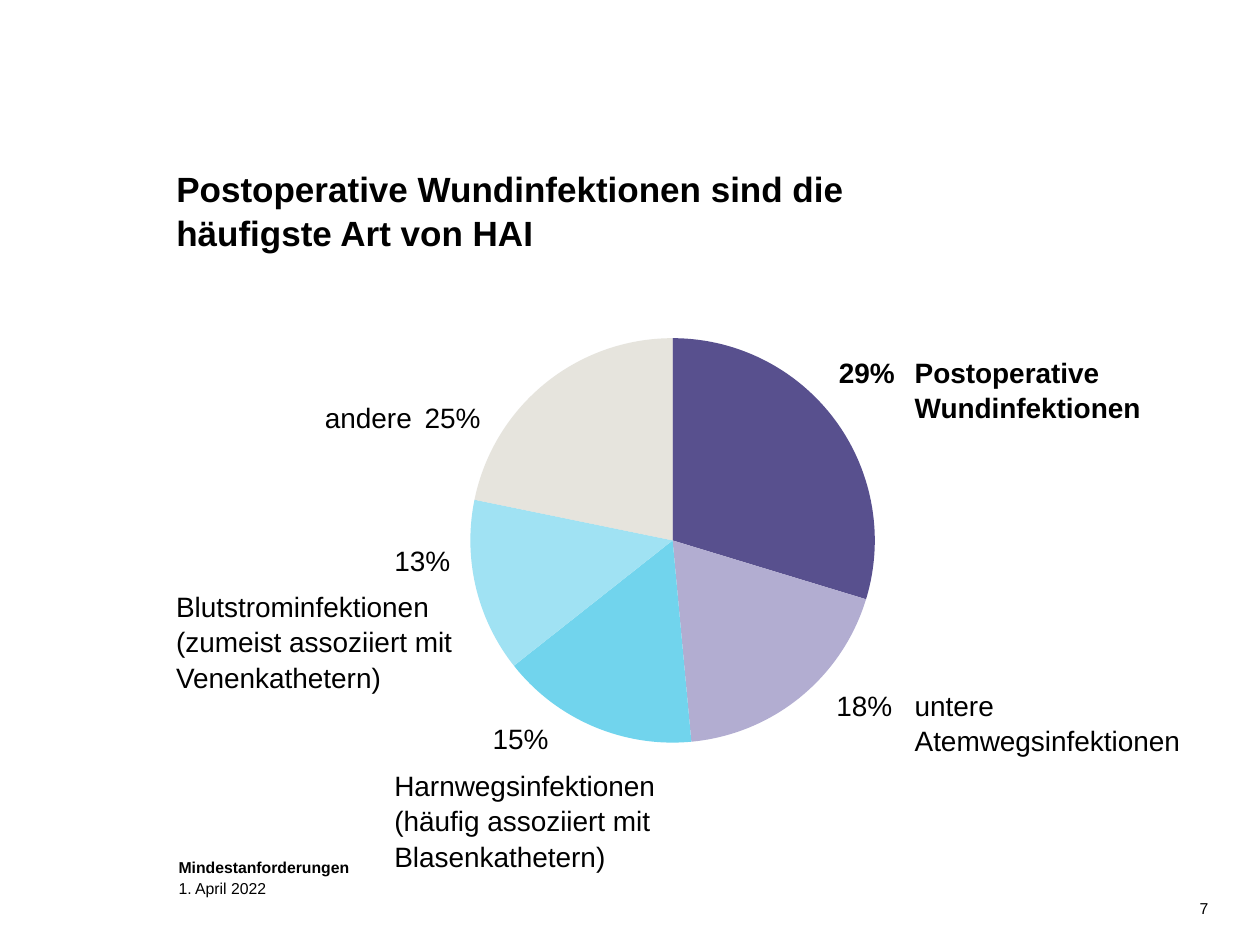
import copy

from lxml import etree
from pptx import Presentation
from pptx import util as u
from pptx.chart.data import CategoryChartData
from pptx.dml.color import RGBColor
from pptx.enum import chart as ch
from pptx.enum import text as t
from pptx.oxml.ns import qn

COLORS = {
    "text": "000000",
    "wound": "58508E",
    "airway": "B2ADD1",
    "urinary": "71D4ED",
    "blood": "A0E2F3",
    "other": "D9D6CC",
}


def write(frame, content, size=16, bold=False, align=t.PP_ALIGN.LEFT, spacing=1.05):
    """Fill a text frame; each line of content is a paragraph, \\v breaks a line."""
    frame.text = content
    frame.word_wrap = True
    frame.auto_size = t.MSO_AUTO_SIZE.NONE
    frame.vertical_anchor = t.MSO_ANCHOR.TOP
    for paragraph in frame.paragraphs:
        paragraph.alignment = align
        paragraph.line_spacing = spacing
        paragraph.space_before = u.Pt(0)
        for run in paragraph.runs:
            run.font.size = u.Pt(size)
            run.font.name = "Arial"
            run.font.bold = bold
            run.font.color.rgb = RGBColor.from_string(COLORS["text"])
        # Line breaks take the format of the text around them
        for line_break in paragraph._p.findall(qn("a:br")):
            line_break.insert(0, copy.deepcopy(paragraph.runs[0]._r.rPr))


prs = Presentation()
prs.slide_width, prs.slide_height = u.Cm(25.4), u.Cm(19.05)
slide = prs.slides.add_slide(prs.slide_layouts[5])

# Title
title = slide.shapes.title
title.left, title.top, title.width, title.height = u.Cm(3.3), u.Cm(3.2), u.Cm(21.11), u.Cm(2)
write(title.text_frame, "Postoperative Wundinfektionen sind die \vhäufigste Art von HAI",
      size=20, bold=True)

# Pie of infection types
data = CategoryChartData()
data.categories = ["1", "2", "3", "4", "5"]
data.add_series("Series 1", [30, 19, 16, 14, 22])
pie = slide.shapes.add_chart(ch.XL_CHART_TYPE.PIE, u.Cm(8.05), u.Cm(6.45),
                             u.Cm(11.02), u.Cm(8.89), data).chart
pie.has_title = False
pie.has_legend = False
pie.font.size = u.Pt(10)
pie.font.name = "Arial"
pie.font.color.rgb = RGBColor.from_string(COLORS["text"])
infections = pie.plots[0]
infections.vary_by_categories = True
for i, part in enumerate(["wound", "airway", "urinary", "blood", "other"]):
    slice_format = infections.series[0].points[i].format
    slice_format.fill.solid()
    slice_format.fill.fore_color.rgb = RGBColor.from_string(COLORS[part])
    slice_format.line.fill.background()

# The last slice, "andere", is partly transparent
other_point = infections.series[0]._element.findall(qn("c:dPt"))[-1]
other_color = other_point.find(".//" + qn("a:srgbClr"))
etree.SubElement(other_color, qn("a:alpha"), val="65000")

# Plot area centred in the chart frame
plot_area = pie._chartSpace.chart.plotArea
layout = plot_area.find(qn("c:layout"))
if layout is None:
    layout = etree.Element(qn("c:layout"))
    plot_area.insert(0, layout)
manual = etree.SubElement(layout, qn("c:manualLayout"))
for tag, value in [("layoutTarget", "inner"), ("xMode", "edge"), ("yMode", "edge"),
                   ("x", "0.13"), ("y", "0.04"), ("w", "0.74"), ("h", "0.92")]:
    etree.SubElement(manual, qn("c:" + tag), val=value)

# Slice labels and percentages: text, left, top, width, lines, bold
labels = [
    ("Postoperative Wundinfektionen", 18.19, 7.01, 6.53, 2, True),
    ("untere Atemwegsinfektionen", 18.19, 13.72, 7.2, 2, False),
    ("Harnwegsinfektionen\v(häufig assoziiert mit Blasenkathetern)", 7.7, 15.34, 8.41, 3, False),
    ("Blutstrominfektionen\v(zumeist assoziiert mit Venenkathetern)", 3.3, 11.73, 7.49, 3, False),
    ("29%", 16.66, 7.01, 2.11, 1, True),
    ("18%", 16.61, 13.72, 2.11, 1, False),
    ("15%", 9.68, 14.38, 2.11, 1, False),
    ("13%", 7.7, 10.8, 2.11, 1, False),
    ("andere", 6.3, 7.92, 2.67, 1, False),
    ("25%", 8.31, 7.92, 2.11, 1, False),
]
for content, left, top, width, lines, bold in labels:
    label = slide.shapes.add_textbox(u.Cm(left), u.Cm(top), u.Cm(width),
                                     u.Cm(0.25 + 0.69 * lines))
    write(label.text_frame, content, bold=bold)

# Footer and page number
footer = slide.shapes.add_textbox(u.Cm(3.35), u.Cm(17.12), u.Cm(14.73), u.Cm(1.12))
write(footer.text_frame, "Mindestanforderungen\n1. April 2022", size=9, spacing=u.Pt(12))
footer.text_frame.paragraphs[0].runs[0].font.bold = True

page_number = slide.shapes.add_textbox(u.Cm(18.69), u.Cm(17.96), u.Cm(5.92), u.Cm(1.02))
write(page_number.text_frame, "7", size=9, align=t.PP_ALIGN.RIGHT, spacing=u.Pt(12))

prs.save("out.pptx")
